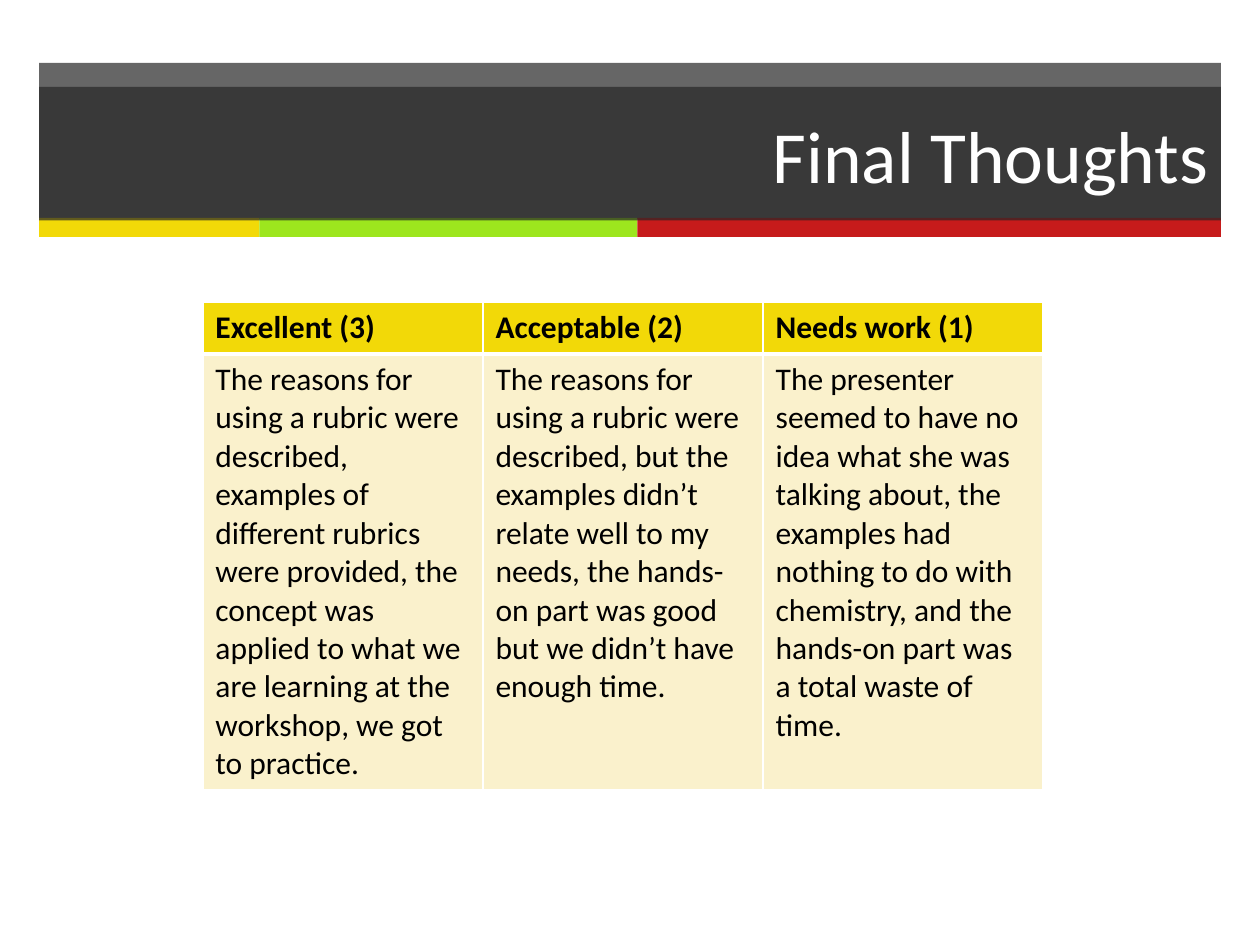
from lxml.etree import SubElement
from pptx import Presentation
from pptx.dml.color import RGBColor
from pptx.enum.shapes import MSO_SHAPE
from pptx.enum.text import MSO_ANCHOR, MSO_AUTO_SIZE, PP_ALIGN
from pptx.oxml.ns import qn
from pptx.util import Inches, Pt

RECTANGLE = MSO_SHAPE.RECTANGLE
MIDDLE = MSO_ANCHOR.MIDDLE
NO_AUTOFIT = MSO_AUTO_SIZE.NONE
LEFT, RIGHT = PP_ALIGN.LEFT, PP_ALIGN.RIGHT

CHARCOAL = RGBColor(0x26, 0x26, 0x26)
YELLOW = RGBColor(0xF2, 0xD9, 0x08)
GREEN = RGBColor(0x9D, 0xE6, 0x1E)
RED = RGBColor(0xC6, 0x1B, 0x1B)
CREAM = RGBColor(0xFA, 0xF1, 0xCC)
BLACK = RGBColor(0, 0, 0)
WHITE = RGBColor(0xFF, 0xFF, 0xFF)

RUBRIC = [
    ("Excellent (3)",
     "The reasons for using a rubric were described, examples of different rubrics "
     "were provided, the concept was applied to what we are learning at the workshop, "
     "we got to practice."),
    ("Acceptable (2)",
     "The reasons for using a rubric were described, but the examples didn’t relate "
     "well to my needs, the hands-on part was good but we didn’t have enough time."),
    ("Needs work (1)",
     "The presenter seemed to have no idea what she was talking about, the examples "
     "had nothing to do with chemistry, and the hands-on part was a total waste of time."),
]


def write(frame, text, size, color, bold=False, align=LEFT):
    paragraph = frame.paragraphs[0]
    paragraph.alignment = align
    run = paragraph.add_run()
    run.text = text
    run.font.name = "Calibri"
    run.font.size = Pt(size)
    run.font.bold = bold
    run.font.color.rgb = color


def paint(area, color, opacity=100):
    area.fill.solid()
    area.fill.fore_color.rgb = color
    area.line.fill.background()
    if opacity < 100:
        tint = area.element.spPr.find(qn("a:solidFill"))[0]
        SubElement(tint, qn("a:alpha"), val=str(opacity * 1000))


deck = Presentation()
deck.slide_width, deck.slide_height = Inches(10), Inches(7.5)
slide = deck.slides.add_slide(deck.slide_layouts[5])

margin = Inches(0.31)
band_width = deck.slide_width - 2 * margin
stripe_top = Inches(1.73)

band = slide.shapes.add_shape(RECTANGLE, margin, Inches(0.5), band_width, Inches(1.24))
band.shadow.inherit = False
paint(band, CHARCOAL, opacity=70)

stripe_left = margin
for color, width in [(YELLOW, 1.75), (GREEN, 3), (RED, 4.63)]:
    stripe = slide.shapes.add_shape(
        RECTANGLE, stripe_left, stripe_top, Inches(width), Inches(0.15))
    stripe.shadow.inherit = False
    paint(stripe, color)
    stripe_left += Inches(width)

heading = slide.shapes.title
heading.left, heading.top = margin, Inches(0.69)
heading.width, heading.height = band_width, Inches(1.06)
paint(heading, CHARCOAL, opacity=70)
heading.text_frame.auto_size = NO_AUTOFIT
heading.text_frame.word_wrap = True
heading.text_frame.vertical_anchor = MIDDLE
write(heading.text_frame, "Final Thoughts", 42, WHITE, align=RIGHT)
heading.element.getparent().append(heading.element)

header_height, body_height = Inches(0.41), Inches(3.4)
rubric = slide.shapes.add_table(
    2, len(RUBRIC), Inches(1.61), Inches(2.4),
    Inches(6.67), header_height + body_height).table
rubric.rows[0].height, rubric.rows[1].height = header_height, body_height

for column, texts in enumerate(RUBRIC):
    for row, text in enumerate(texts):
        cell = rubric.cell(row, column)
        is_header = row == 0
        write(cell.text_frame, text, 18, BLACK, bold=is_header)
        thick_side = "lnB" if is_header else "lnT"
        cell_format = cell._tc.get_or_add_tcPr()
        for side in ("lnL", "lnR", "lnT", "lnB"):
            weight = Pt(3 if side == thick_side else 1)
            border = SubElement(cell_format, qn(f"a:{side}"), w=str(weight))
            border_fill = SubElement(border, qn("a:solidFill"))
            SubElement(border_fill, qn("a:srgbClr"), val=str(WHITE))
        cell.fill.solid()
        cell.fill.fore_color.rgb = YELLOW if is_header else CREAM

deck.save("out.pptx")
